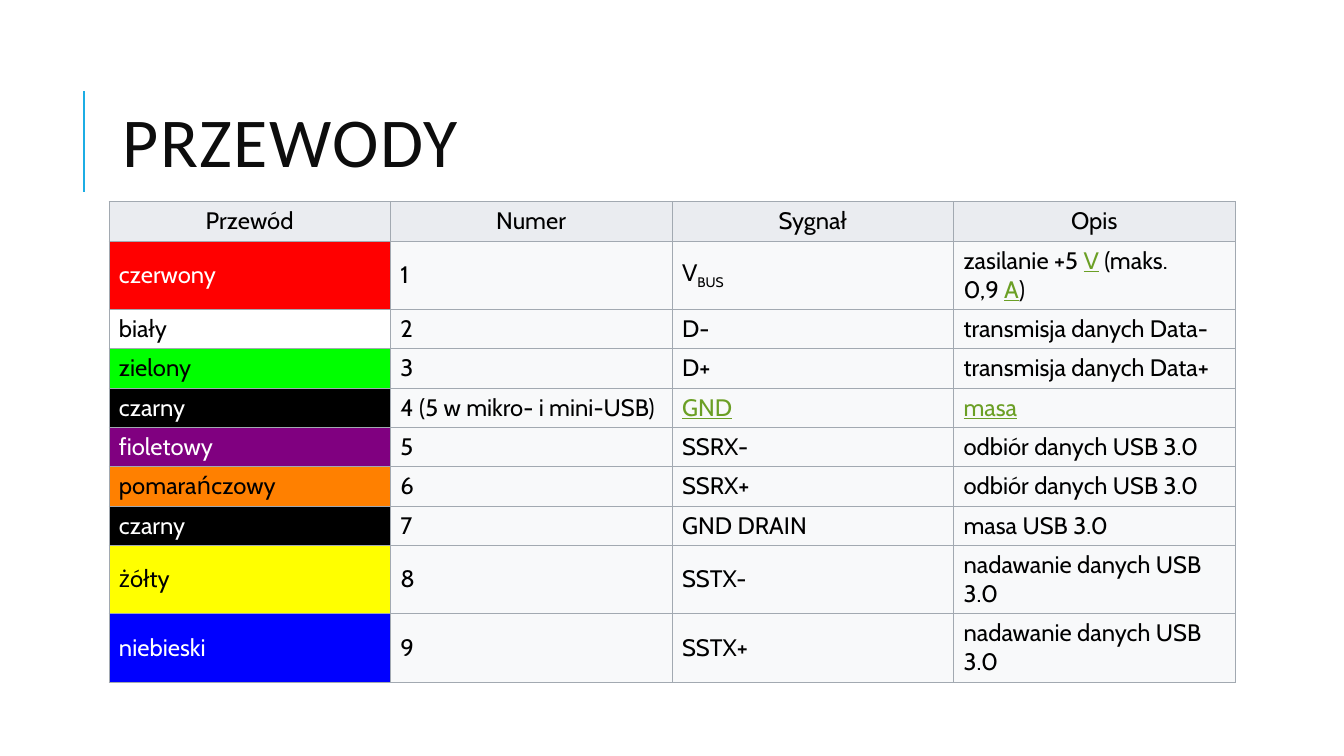
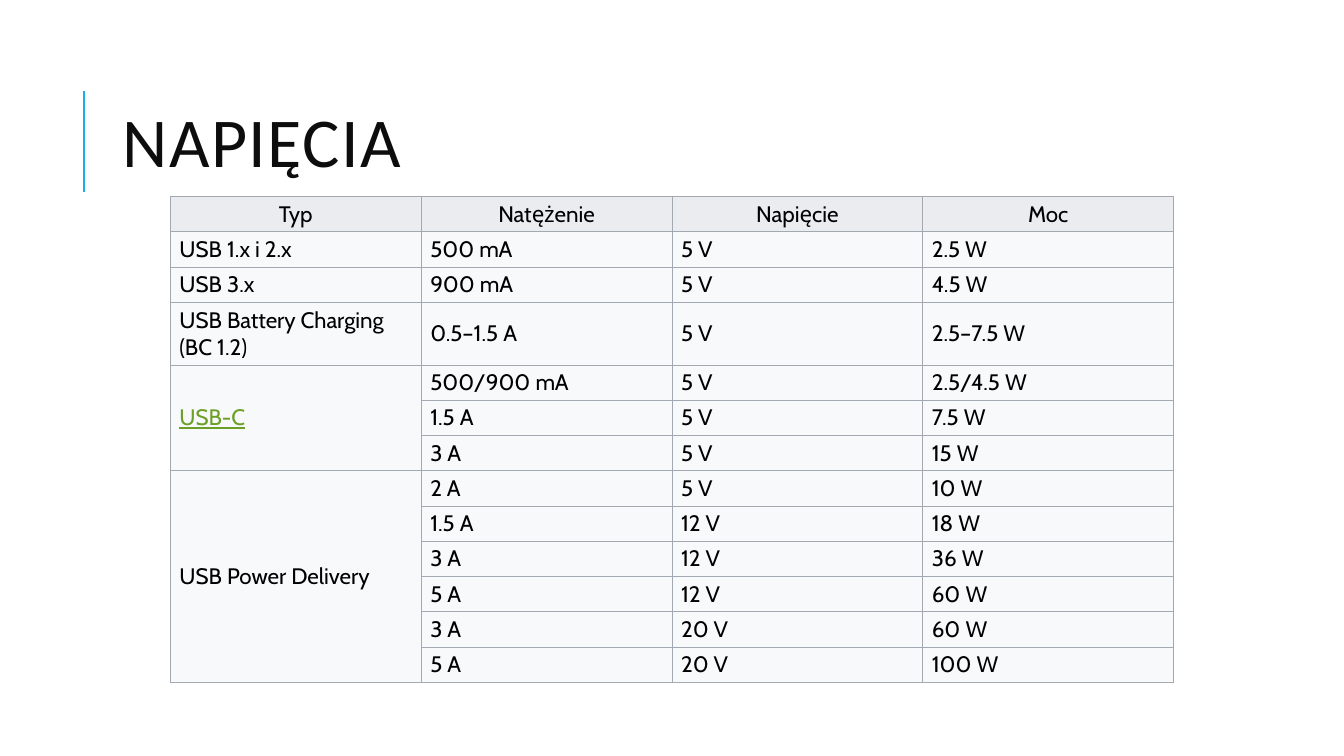
from pptx import Presentation
from pptx.dml.color import RGBColor
from pptx.enum.shapes import MSO_CONNECTOR
from pptx.enum.text import MSO_ANCHOR, PP_ALIGN
from pptx.oxml.ns import qn
from pptx.util import Inches, Pt
from lxml.etree import SubElement

# Colours
BLACK = RGBColor(0x00, 0x00, 0x00)
WHITE = RGBColor(0xFF, 0xFF, 0xFF)
INK = RGBColor(0x0D, 0x0D, 0x0D)
ACCENT = RGBColor(0x1C, 0xAD, 0xE4)
GREEN = RGBColor(0x6B, 0x9F, 0x25)
HEAD = RGBColor(0xEA, 0xEC, 0xF0)
BODY = RGBColor(0xF8, 0xF9, 0xFA)
GRID = RGBColor(0xA2, 0xA9, 0xB1)

# Wire name: fill and text colour
WIRES = {
    "czerwony": (RGBColor(0xFF, 0x00, 0x00), WHITE),
    "biały": (WHITE, BLACK),
    "zielony": (RGBColor(0x00, 0xFF, 0x00), BLACK),
    "czarny": (BLACK, WHITE),
    "fioletowy": (RGBColor(0x80, 0x00, 0x80), WHITE),
    "pomarańczowy": (RGBColor(0xFF, 0x80, 0x00), BLACK),
    "żółty": (RGBColor(0xFF, 0xFF, 0x00), BLACK),
    "niebieski": (RGBColor(0x00, 0x00, 0xFF), WHITE),
}

# Run styles; "~" in a table text stands for a no-break space
PLAIN, LINK, SUB = "plain", "link", "sub"
TIE = chr(160)


class Deck:
    """Holds the shared style and the current slide."""

    title_font, text_font = "Calibri", "Cabin"

    def __init__(self):
        self.prs = Presentation()
        self.prs.slide_width = Inches(13.33)
        self.prs.slide_height = Inches(7.5)
        self.slide = None

    def page(self, title):
        self.slide = self.prs.slides.add_slide(self.prs.slide_layouts[6])
        self.rule(0.83, 0.9, 1.9)
        self.title(title)

    def rule(self, x, top, end):
        line = self.slide.shapes.add_connector(
            MSO_CONNECTOR.STRAIGHT, Inches(x), Inches(end), Inches(x), Inches(top))
        line.line.color.rgb = ACCENT
        line.line.width = Pt(1.5)
        SubElement(line._element.spPr, qn("a:effectLst"))

    def title(self, text):
        box = self.slide.shapes.add_textbox(
            Inches(1.12), Inches(0.64), Inches(10.63), Inches(1.64))
        frame = box.text_frame
        frame.word_wrap = True
        frame.vertical_anchor = MSO_ANCHOR.MIDDLE
        para = frame.paragraphs[0]
        para.line_spacing = 0.8
        run = self.run(para, text, self.title_font, 50, INK)
        run._r.get_or_add_rPr().set("spc", "100")

    def run(self, para, text, font, size, color):
        run = para.add_run()
        run.text = text
        run.font.name = font
        run.font.size = Pt(size)
        run.font.color.rgb = color
        return run

    def table(self, left, top, width, heights, rows, size, pad, spans=()):
        count = len(rows[0])
        grid = self.slide.shapes.add_table(
            len(rows), count, Inches(left), Inches(top),
            Inches(width), Inches(sum(heights))).table
        grid.first_row = grid.horz_banding = False
        for col in grid.columns:
            col.width = Inches(width / count)
        for row, height in zip(grid.rows, heights):
            row.height = Inches(height)
        for first, last in spans:
            grid.cell(first, 0).merge(grid.cell(last, 0))
        for r, row in enumerate(rows):
            for c, text in enumerate(row):
                fill, color = WIRES.get(text, (BODY, BLACK)) if type(text) is str else (BODY, BLACK)
                self.cell(grid.cell(r, c), text, size, pad,
                          HEAD if r == 0 else fill, color, r == 0)

    def cell(self, cell, text, size, pad, fill, color, head):
        self.edge(cell)
        cell.fill.solid()
        cell.fill.fore_color.rgb = fill
        cell.vertical_anchor = MSO_ANCHOR.MIDDLE
        cell.margin_left = cell.margin_right = Inches(pad[0])
        cell.margin_top = cell.margin_bottom = Inches(pad[1])
        if text is None:
            return
        para = cell.text_frame.paragraphs[0]
        para.alignment = PP_ALIGN.CENTER if head else PP_ALIGN.LEFT
        parts = [(text, PLAIN)] if type(text) is str else text
        for part, kind in parts:
            run = self.run(para, part.replace("~", TIE), self.text_font, size,
                           GREEN if kind == LINK else color)
            if kind == LINK:
                run.font.underline = True
            elif kind == SUB:
                run._r.get_or_add_rPr().set("baseline", "-25000")

    def edge(self, cell):
        props = cell._tc.get_or_add_tcPr()
        for side in ("lnL", "lnR", "lnT", "lnB"):
            line = SubElement(props, qn("a:" + side), w=str(Pt(0.6)))
            fill = SubElement(line, qn("a:solidFill"))
            SubElement(fill, qn("a:srgbClr"), val=str(GRID))


def main():
    deck = Deck()

    # Wires
    deck.page("PRZEWODY")
    power = [("zasilanie +5~", PLAIN), ("V", LINK), ("~(maks. 0,9~", PLAIN),
             ("A", LINK), (")", PLAIN)]
    wires = [
        ("Przewód", "Numer", "Sygnał", "Opis"),
        ("czerwony", "1", [("V", PLAIN), ("BUS", SUB)], power),
        ("biały", "2", "D-", "transmisja danych Data-"),
        ("zielony", "3", "D+", "transmisja danych Data+"),
        ("czarny", "4 (5 w mikro- i mini-USB)", [("GND", LINK)], [("masa", LINK)]),
        ("fioletowy", "5", "SSRX-", "odbiór danych USB 3.0"),
        ("pomarańczowy", "6", "SSRX+", "odbiór danych USB 3.0"),
        ("czarny", "7", "GND DRAIN", "masa USB 3.0"),
        ("żółty", "8", "SSTX-", "nadawanie danych USB 3.0"),
        ("niebieski", "9", "SSTX+", "nadawanie danych USB 3.0"),
    ]
    tall = (1, 8, 9)
    heights = [0.68 if r in tall else 0.39 for r in range(len(wires))]
    deck.table(1.08, 2, 11.17, heights, wires, 17, (0.1, 0.05))

    # Voltages
    deck.page("NAPIĘCIA")
    volts = [
        ("Typ", "Natężenie", "Napięcie", "Moc"),
        ("USB~1.x i 2.x", "500~mA", "5~V", "2.5~W"),
        ("USB~3.x", "900~mA", "5~V", "4.5~W"),
        ("USB Battery Charging (BC 1.2)", "0.5–1.5~A", "5~V", "2.5–7.5~W"),
        ([("USB-C", LINK)], "500/900~mA", "5~V", "2.5/4.5~W"),
        (None, "1.5~A", "5~V", "7.5~W"),
        (None, "3~A", "5~V", "15~W"),
        ("USB Power Delivery", "2~A", "5~V", "10~W"),
        (None, "1.5~A", "12~V", "18~W"),
        (None, "3~A", "12~V", "36~W"),
        (None, "5~A", "12~V", "60~W"),
        (None, "3~A", "20~V", "60~W"),
        (None, "5~A", "20~V", "100~W"),
    ]
    heights = [0.62 if r == 3 else 0.35 for r in range(len(volts))]
    deck.table(1.69, 1.95, 9.95, heights, volts, 16, (0.09, 0.04),
               spans=((4, 6), (7, 12)))

    deck.prs.save("out.pptx")


if __name__ == "__main__":
    main()
